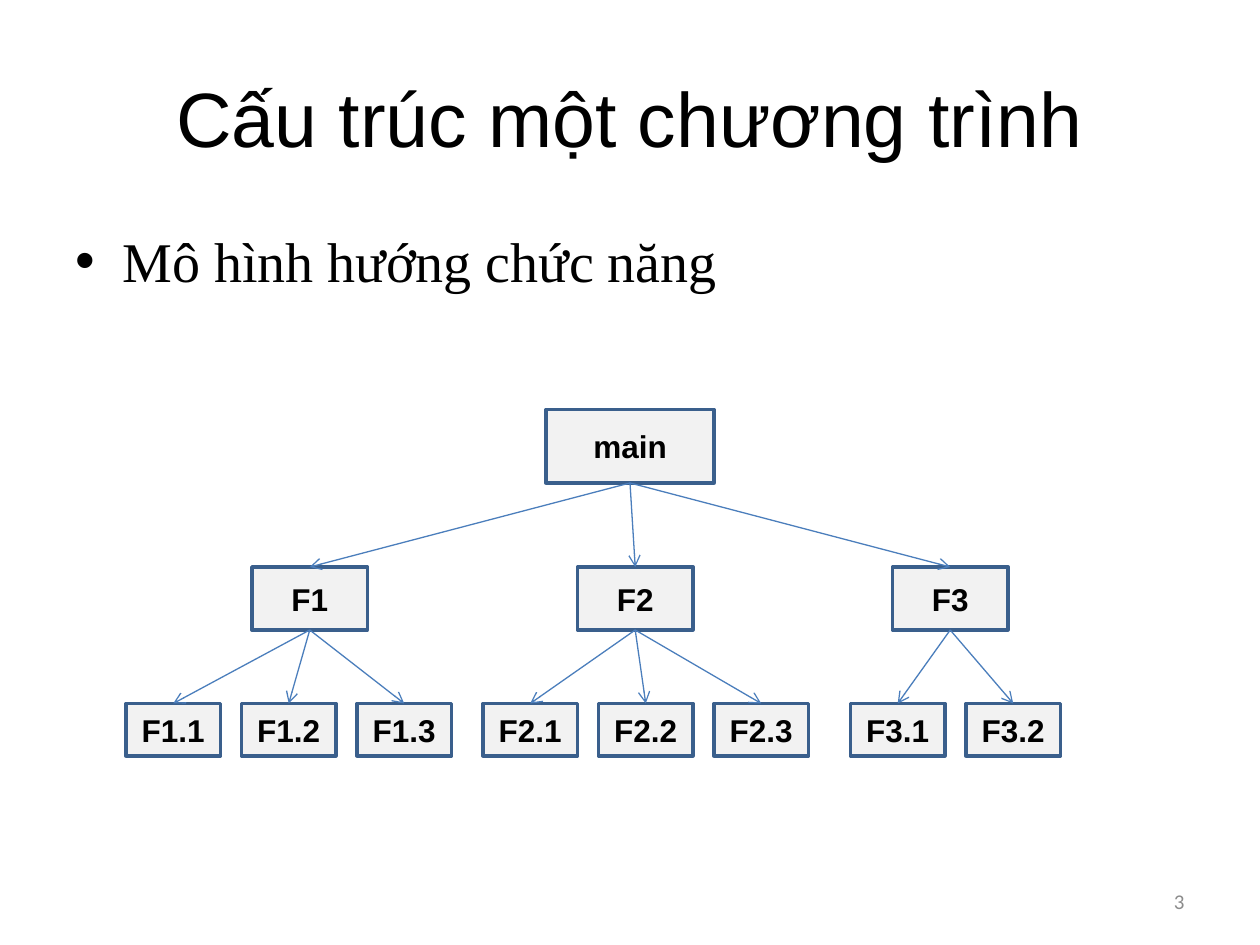
from dataclasses import dataclass

from lxml.etree import SubElement
from pptx import Presentation
from pptx.dml.color import RGBColor as RGB
from pptx.enum.shapes import MSO_CONNECTOR as CONN, MSO_SHAPE as SHAPE
from pptx.enum.text import MSO_ANCHOR as ANCHOR, PP_ALIGN as ALIGN
from pptx.oxml.ns import qn
from pptx.util import Pt


@dataclass(frozen=True)
class Theme:
    text: RGB = RGB(0, 0, 0)
    muted: RGB = RGB(0x8C, 0x8C, 0x8C)
    box_fill: RGB = RGB(0xF2, 0xF2, 0xF2)
    box_line: RGB = RGB(0x3A, 0x5F, 0x8C)
    arrow: RGB = RGB(0x4B, 0x7E, 0xBC)
    title_size: float = 44
    body_size: float = 32
    node_size: float = 18
    number_size: float = 12
    sans: str = "Arial"
    serif: str = "Times New Roman"
    number_font: str = "Calibri"


@dataclass(frozen=True)
class Level:
    """Box geometry shared by one level of the call tree."""
    top: float
    width: float
    height: float
    inset: float | None = None


@dataclass(frozen=True)
class Branch:
    name: str
    left: float
    first_leaf: float
    leaves: int


THEME = Theme()
ROOT = Level(234, 96, 42)
FUNCTION = Level(324, 66, 36)
LEAF = Level(402, 54, 30, inset=0)
ROOT_LEFT = 312
LEAF_STEP = 66
BRANCHES = (
    Branch("F1", 144, 72, 3),
    Branch("F2", 330, 276, 3),
    Branch("F3", 510, 486, 2),
)


def write(s, text: str, size: float, font: str, color: RGB, align: ALIGN,
          anchor: ANCHOR = ANCHOR.MIDDLE, bold: bool = False):
    tf = s.text_frame
    tf.word_wrap = True
    tf.vertical_anchor = anchor
    p = tf.paragraphs[0]
    p.alignment = align
    r = p.add_run()
    r.text = text
    for name, value in {"size": Pt(size), "name": font, "bold": bold}.items():
        setattr(r.font, name, value)
    r.font.color.rgb = color
    return p


def add_text(slide, left: float, top: float, width: float, height: float,
             *args, **kwargs):
    s = slide.shapes.add_textbox(Pt(left), Pt(top), Pt(width), Pt(height))
    return write(s, *args, **kwargs)


def add_bullet(p, indent: float) -> None:
    """Give the paragraph a round bullet with a hanging indent."""
    pPr = p._p.get_or_add_pPr()
    pPr.set("marL", str(Pt(indent)))
    pPr.set("indent", str(-Pt(indent)))
    SubElement(pPr, qn("a:buFont"), typeface=THEME.sans)
    SubElement(pPr, qn("a:buChar"), char="•")


def add_node(slide, text: str, left: float, level: Level):
    s = slide.shapes.add_shape(SHAPE.RECTANGLE, Pt(left), Pt(level.top),
                               Pt(level.width), Pt(level.height))
    s.shadow.inherit = False
    s.fill.solid()
    s.fill.fore_color.rgb = THEME.box_fill
    s.line.color.rgb = THEME.box_line
    s.line.width = Pt(2)
    if level.inset is not None:
        for side in ("left", "top", "right", "bottom"):
            setattr(s.text_frame, f"margin_{side}", Pt(level.inset))
    write(s, text, THEME.node_size, THEME.sans, THEME.text, ALIGN.CENTER,
          bold=True)
    return s


def add_arrow(slide, parent, child) -> None:
    """Join the bottom of the parent to the top of the child."""
    c = slide.shapes.add_connector(CONN.STRAIGHT, 0, 0, 0, 0)
    c.begin_connect(parent, 2)
    c.end_connect(child, 0)
    c.line.color.rgb = THEME.arrow
    c.line.width = Pt(0.75)
    SubElement(c.line._get_or_add_ln(), qn("a:tailEnd"), type="arrow")
    SubElement(c._element.spPr, qn("a:effectLst"))


def add_tree(slide) -> None:
    root = add_node(slide, "main", ROOT_LEFT, ROOT)
    functions = [add_node(slide, b.name, b.left, FUNCTION) for b in BRANCHES]
    links = [(root, f) for f in functions]
    for branch, function in zip(BRANCHES, functions):
        for i in range(branch.leaves):
            leaf = add_node(slide, f"{branch.name}.{i + 1}",
                            branch.first_leaf + i * LEAF_STEP, LEAF)
            links.append((function, leaf))
    for parent, child in links:
        add_arrow(slide, parent, child)


def main() -> None:
    prs = Presentation()
    prs.slide_width, prs.slide_height = Pt(720), Pt(540)
    slide = prs.slides.add_slide(prs.slide_layouts[6])
    add_text(slide, 36, 21.6, 648, 90, "Cấu trúc một chương trình",
             THEME.title_size, THEME.sans, THEME.text, ALIGN.CENTER)
    p = add_text(slide, 36, 126, 648, 356.4, "Mô hình hướng chức năng",
                 THEME.body_size, THEME.serif, THEME.text, ALIGN.LEFT,
                 anchor=ANCHOR.TOP)
    p.space_before = Pt(6.4)
    add_bullet(p, 27)
    add_tree(slide)
    add_text(slide, 516, 500.5, 168, 28.75, "3", THEME.number_size,
             THEME.number_font, THEME.muted, ALIGN.RIGHT)
    prs.save("out.pptx")


if __name__ == "__main__":
    main()
